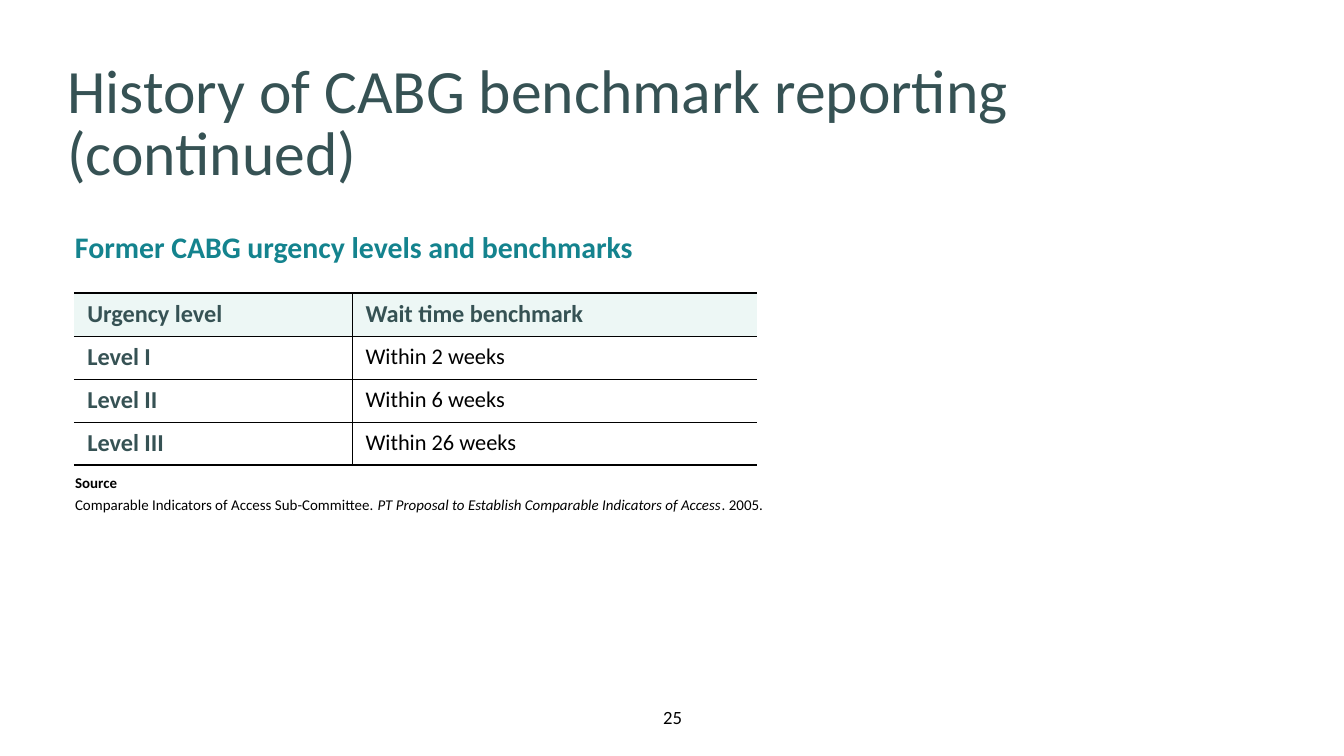
from lxml import etree
from pptx import Presentation
from pptx import util as u
from pptx.dml.color import RGBColor
from pptx.enum import text
from pptx.oxml import ns

FONT = "Calibri"
COLORS = {
    "black": "000000",
    "white": "FFFFFF",
    "slate": "365254",
    "teal": "14838E",
    "mint": "EDF7F5",
}
ROWS = [
    ("Urgency level", "Wait time benchmark"),
    ("Level I", "Within 2 weeks"),
    ("Level II", "Within 6 weeks"),
    ("Level III", "Within 26 weeks"),
]
COLUMN_WIDTHS = (2.07, 3.01)
ROW_HEIGHT = 1.27 / len(ROWS)


def color(name):
    return RGBColor.from_string(COLORS[name])


def add_span(para, words, size=12, ink="black", bold=False, italic=False):
    span = para.add_run()
    span.text = words
    span.font.name = FONT
    span.font.size = u.Pt(size)
    span.font.bold = bold
    span.font.italic = italic
    span.font.color.rgb = color(ink)


def set_frame(frame, anchor=text.MSO_ANCHOR.TOP, margins=None):
    frame.word_wrap = True
    frame.auto_size = text.MSO_AUTO_SIZE.NONE
    frame.vertical_anchor = anchor
    if margins is not None:
        frame.margin_left = frame.margin_right = u.Inches(margins)
        frame.margin_top = frame.margin_bottom = u.Inches(margins)


def add_box(page, left, top, width, height, **frame_format):
    box = page.shapes.add_textbox(
        u.Inches(left), u.Inches(top), u.Inches(width), u.Inches(height))
    set_frame(box.text_frame, **frame_format)
    return box.text_frame


def add_title(page, words):
    title = page.shapes.title
    title.left, title.top = u.Inches(0.5), u.Inches(0.48)
    title.width, title.height = u.Inches(9), u.Inches(0.93)
    set_frame(title.text_frame, margins=0)
    para = title.text_frame.paragraphs[0]
    para.alignment = text.PP_ALIGN.LEFT
    para.line_spacing = u.Pt(33)
    add_span(para, words, size=33, ink="slate")


def set_border(cell, side, points):
    """Draw one cell edge in black, or hide it when points is 0."""
    properties = cell._tc.get_or_add_tcPr()
    line = etree.SubElement(properties, ns.qn(f"a:ln{side}"), w=str(u.Pt(points)))
    if points:
        fill = etree.SubElement(line, ns.qn("a:solidFill"))
        etree.SubElement(fill, ns.qn("a:srgbClr"), val=COLORS["black"])
    else:
        etree.SubElement(line, ns.qn("a:noFill"))


def add_benchmark_table(page):
    table = page.shapes.add_table(
        len(ROWS), len(COLUMN_WIDTHS), u.Inches(0.55), u.Inches(2.18),
        u.Inches(sum(COLUMN_WIDTHS)), u.Inches(ROW_HEIGHT * len(ROWS))).table
    table.horz_banding = table.first_row = False
    for column, width in zip(table.columns, COLUMN_WIDTHS):
        column.width = u.Inches(width)
    for r, labels in enumerate(ROWS):
        table.rows[r].height = u.Inches(ROW_HEIGHT)
        for c, label in enumerate(labels):
            cell = table.cell(r, c)
            heading = r == 0 or c == 0
            add_span(cell.text_frame.paragraphs[0], label, bold=heading,
                     size=13 if heading else 12,
                     ink="slate" if heading else "black")
            set_border(cell, "L", 0.5 if c else 0)
            set_border(cell, "R", 0 if c else 0.5)
            set_border(cell, "T", 0.5 if r else 1)
            set_border(cell, "B", 1 if r == len(ROWS) - 1 else 0.5)
            cell.fill.solid()
            cell.fill.fore_color.rgb = color("white" if r else "mint")


def add_source(page):
    frame = add_box(page, 0.46, 3.44, 5.42, 0.47)
    heading, citation = frame.paragraphs[0], frame.add_paragraph()
    heading.line_spacing = citation.line_spacing = u.Pt(12)
    add_span(heading, "Source", size=8, bold=True)
    add_span(citation, "Comparable Indicators of Access Sub-Committee. ", size=8)
    add_span(citation, "PT Proposal to Establish Comparable Indicators of Access",
             size=8, italic=True)
    add_span(citation, ". 2005.", size=8)


def add_page_number(page, number):
    frame = add_box(page, 4.69, 5.25, 0.63, 0.17,
                    anchor=text.MSO_ANCHOR.MIDDLE, margins=0)
    frame.paragraphs[0].alignment = text.PP_ALIGN.CENTER
    add_span(frame.paragraphs[0], number, size=10)


def main():
    deck = Presentation()
    deck.slide_width = u.Inches(10)
    deck.slide_height = deck.slide_width * 9 // 16
    page = deck.slides.add_slide(deck.slide_layouts[5])
    add_title(page, "History of CABG benchmark reporting (continued)")
    subtitle = add_box(page, 0.46, 1.65, 5.57, 0.37)
    add_span(subtitle.paragraphs[0], "Former CABG urgency levels and benchmarks",
             size=16, ink="teal", bold=True)
    add_benchmark_table(page)
    add_source(page)
    add_page_number(page, "25")
    deck.save("out.pptx")


if __name__ == "__main__":
    main()
